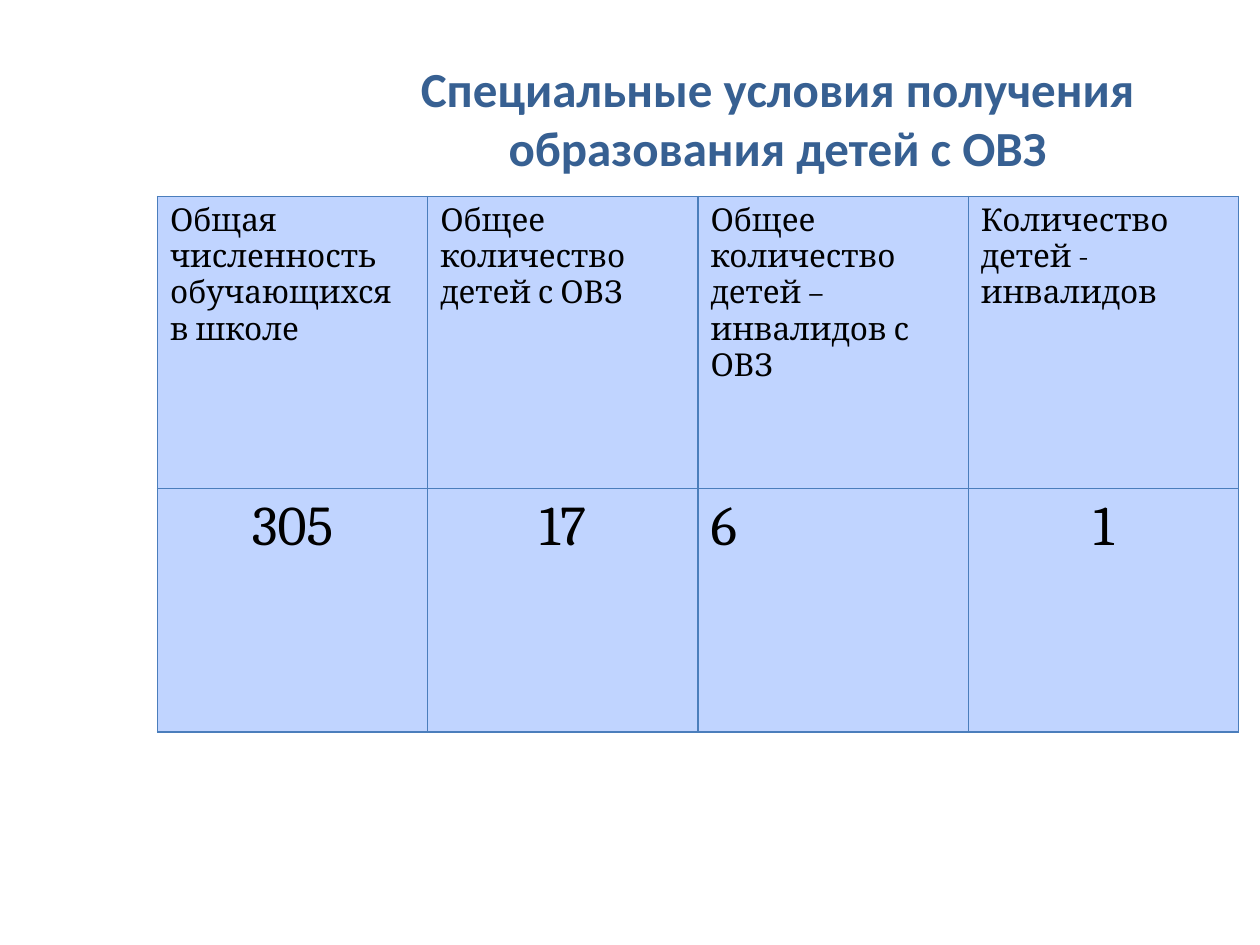
from lxml.etree import SubElement
from pptx import Presentation
from pptx.dml.color import RGBColor
from pptx.enum.text import MSO_ANCHOR, PP_ALIGN
from pptx.oxml.ns import qn
from pptx.util import Inches, Pt

TITLE_BLUE = RGBColor(0x37, 0x60, 0x92)
CELL_BLUE = RGBColor(0xC0, 0xD4, 0xFF)
BORDER_BLUE = RGBColor(0x4B, 0x7E, 0xBC)
BLACK = RGBColor(0, 0, 0)

HEADINGS = [
    "Общая численность обучающихся в школе",
    "Общее количество детей с ОВЗ",
    "Общее количество детей – инвалидов с ОВЗ",
    "Количество детей - инвалидов",
]
COUNTS = ["305", "17", "6", "1"]
COUNT_ALIGNS = [PP_ALIGN.CENTER, PP_ALIGN.CENTER, PP_ALIGN.LEFT, PP_ALIGN.CENTER]


def write(frame, text, size, font="Cambria", color=BLACK, bold=False,
          align=PP_ALIGN.LEFT):
    frame.word_wrap = True
    paragraph = frame.paragraphs[0]
    paragraph.alignment = align
    run = paragraph.add_run()
    run.text = text
    run.font.size = Pt(size)
    run.font.name = font
    run.font.bold = bold
    run.font.color.rgb = color


def style_cell(cell):
    # Borders come before the fill in the cell properties
    properties = cell._tc.get_or_add_tcPr()
    for side in ("a:lnL", "a:lnR", "a:lnT", "a:lnB"):
        border = SubElement(properties, qn(side), w=str(Pt(0.75)))
        fill = SubElement(border, qn("a:solidFill"))
        SubElement(fill, qn("a:srgbClr"), val=str(BORDER_BLUE))
    cell.fill.solid()
    cell.fill.fore_color.rgb = CELL_BLUE


def add_title(slide):
    title = slide.shapes.title
    title.left, title.top = Inches(2.34), Inches(0.31)
    title.width, title.height = Inches(7.66), Inches(1.25)
    title.text_frame.vertical_anchor = MSO_ANCHOR.MIDDLE
    write(title.text_frame, "Специальные условия получения образования детей с ОВЗ",
          28, font="Calibri", color=TITLE_BLUE, bold=True, align=PP_ALIGN.CENTER)


def add_pupil_table(slide):
    pupils = slide.shapes.add_table(2, len(HEADINGS), Inches(1.25), Inches(1.56),
                                    Inches(8.58), Inches(4.25)).table
    pupils.rows[0].height = Inches(2.32)
    pupils.rows[1].height = Inches(1.93)
    for column, (heading, count, align) in enumerate(
            zip(HEADINGS, COUNTS, COUNT_ALIGNS)):
        write(pupils.cell(0, column).text_frame, heading, 18)
        write(pupils.cell(1, column).text_frame, count, 32, align=align)
    for cell in pupils.iter_cells():
        style_cell(cell)


def main():
    deck = Presentation()
    deck.slide_width, deck.slide_height = Inches(10), Inches(7.5)
    slide = deck.slides.add_slide(deck.slide_layouts[5])
    add_pupil_table(slide)
    add_title(slide)
    deck.save("out.pptx")


if __name__ == "__main__":
    main()
